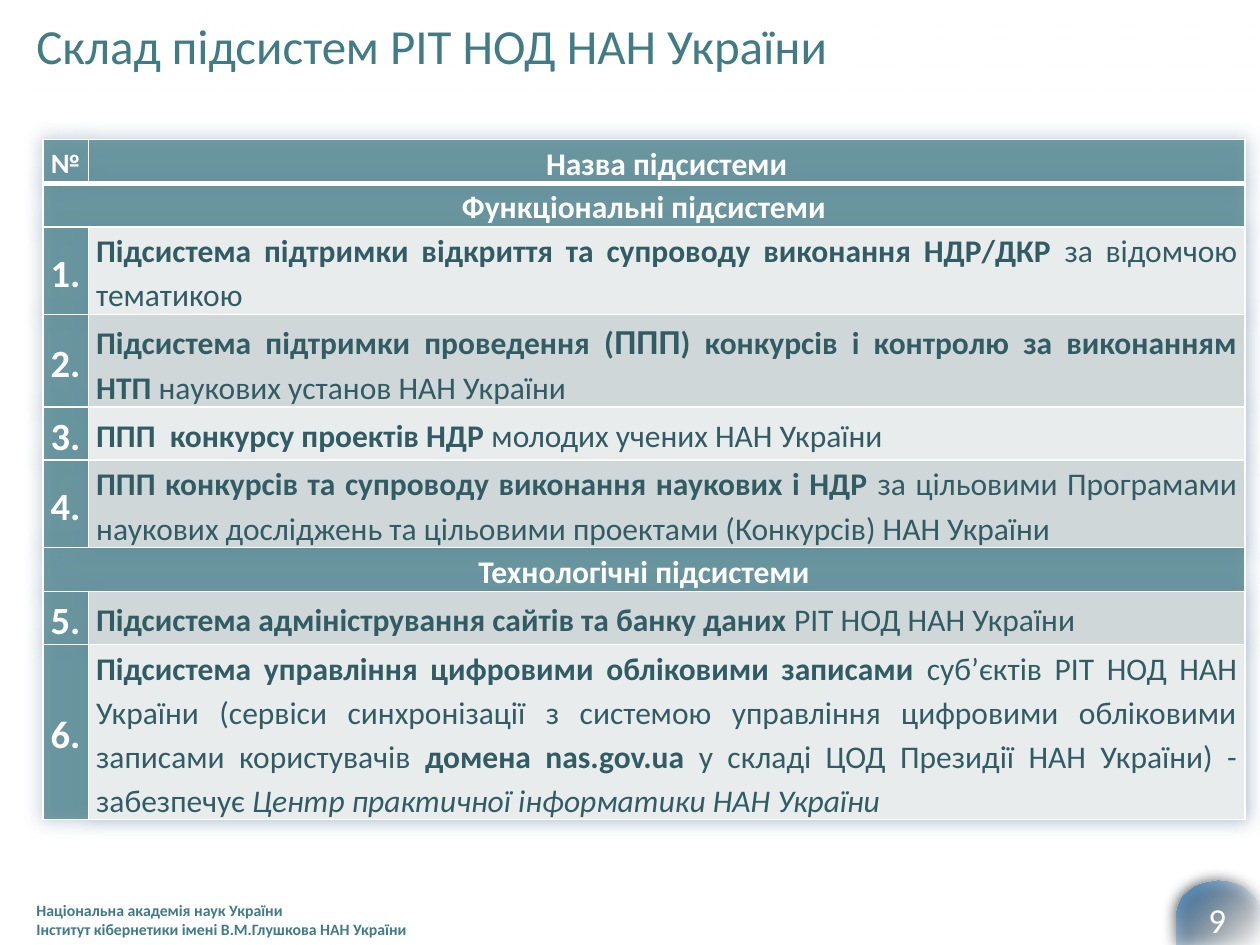
import pptx
import pptx.util
import pptx.oxml
import pptx.dml.color
import pptx.enum.shapes
import pptx.enum.text
from pptx.oxml.ns import nsdecls, qn

Pt = pptx.util.Pt
ALIGN = pptx.enum.text.PP_ALIGN
MIDDLE = pptx.enum.text.MSO_ANCHOR.MIDDLE
LEFT, MID, JUST = ALIGN.LEFT, ALIGN.CENTER, ALIGN.JUSTIFY


def rgb(code):
    return pptx.dml.color.RGBColor.from_string(code)


def xml(tag, attrs="", inner=""):
    return pptx.oxml.parse_xml(f"<a:{tag} {nsdecls('a')} {attrs}>{inner}</a:{tag}>")


def tint(code, alpha=100):
    """Colour element with its opacity in percent."""
    return f'<a:srgbClr val="{code}"><a:alpha val="{alpha * 1000}"/></a:srgbClr>'


def glow(code, alpha, blur, dist=0, angle=0):
    """Effect list with one soft outer shadow."""
    shade = (f'<a:outerShdw blurRad="{Pt(blur)}" dist="{Pt(dist)}" '
             f'dir="{angle * 60000}" rotWithShape="0">{tint(code, alpha)}</a:outerShdw>')
    return xml("effectLst", "", shade)


def write(frame, runs, size=18, color="FFFFFF", bold=False, align=LEFT, space=None):
    """Fill a text frame; runs is a string or a list of (text, changes)."""
    frame.word_wrap = True
    frame.vertical_anchor = MIDDLE
    para = frame.paragraphs[0]
    para.alignment = align
    if space:
        para.line_spacing = space
    for text, diff in [(runs, {})] if isinstance(runs, str) else runs:
        for i, line in enumerate(text.split("\n")):
            if i:
                para.add_line_break()
            run = para.add_run()
            run.text = line
            font = run.font
            font.name = "Calibri"
            font.size = Pt(diff.get("size", size))
            font.bold = diff.get("bold", bold)
            font.italic = diff.get("italic", False)
            font.color.rgb = rgb(color)


class Deck:
    teal, dark, white = "417B85", "315C63", "FFFFFF"
    head, pale, gray = "417B84", "E9ECED", "CFD7D9"

    def __init__(self, wide, high):
        self.file = pptx.Presentation()
        self.file.slide_width, self.file.slide_height = Pt(wide), Pt(high)
        self.slide = self.file.slides.add_slide(self.file.slide_layouts[6])

    def text(self, box, words, **style):
        item = self.slide.shapes.add_textbox(*map(Pt, box))
        write(item.text_frame, words, **style)
        return item

    def blend(self, item, stops, angle=0):
        """Gradient fill from (place, colour, opacity) stops."""
        marks = "".join(f'<a:gs pos="{pos * 1000}">{tint(code, alpha)}</a:gs>'
                        for pos, code, alpha in stops)
        props = item._element.spPr
        for old in props.findall(qn("a:noFill")):
            props.remove(old)
        fill = xml("gradFill", 'rotWithShape="1"',
                   f'<a:gsLst>{marks}</a:gsLst><a:lin ang="{angle * 60000}" scaled="0"/>')
        props.find(qn("a:prstGeom")).addnext(fill)

    def badge(self, box):
        kind = pptx.enum.shapes.MSO_SHAPE.FLOWCHART_DELAY
        item = self.slide.shapes.add_shape(kind, *map(Pt, box))
        item.rotation = 270
        item.line.fill.background()
        props = item._element.spPr
        props.find(qn("a:xfrm")).set("flipV", "1")
        self.blend(item, [(0, "E5E9EE", 0), (100, "3477B2", 100)], 45)
        props.append(glow("000000", 100, 8.5, 1, 90))

    def cell(self, cell, words, fill, alpha=100, rule=1, **style):
        cell.margin_left = cell.margin_right = Pt(4.5)
        cell.margin_top = cell.margin_bottom = 0
        write(cell.text_frame, words, space=1.15, **style)
        cell.vertical_anchor = MIDDLE
        cell.fill.solid()
        cell.fill.fore_color.rgb = rgb(fill)
        props = cell._tc.get_or_add_tcPr()
        shade = props.find(qn("a:solidFill"))[0]
        shade.append(xml("alpha", f'val="{alpha * 1000}"'))
        for i, side in enumerate("LRTB"):
            width = rule if side == "B" else 1
            line = f"<a:solidFill>{tint(self.white)}</a:solidFill>"
            props.insert(i, xml("ln" + side, f'w="{Pt(width)}"', line))

    def table(self, box, cols, rows):
        item = self.slide.shapes.add_table(len(rows), len(cols), *map(Pt, box))
        grid = item.table
        grid.first_row = grid.horz_banding = False
        grid._tbl.tblPr.insert(0, glow("6F8FAF", 60, 10))
        for col, width in zip(grid.columns, cols):
            col.width = Pt(width)
        for i, (high, mark, words) in enumerate(rows):
            grid.rows[i].height = Pt(high)
            left, right = grid.cell(i, 0), grid.cell(i, 1)
            head = dict(fill=self.head, alpha=69, bold=True, align=MID)
            if not mark:  # section band
                left.merge(right)
                self.cell(left, words, **head)
            elif i == 0:  # column heads
                self.cell(left, mark, size=16, rule=3, **head)
                self.cell(right, words, rule=3, **head)
            else:
                self.cell(left, mark, size=22, **head)
                self.cell(right, words, fill=self.gray if i % 2 else self.pale,
                          color=self.dark, bold=True, align=JUST)


PLAIN = {"bold": False}
ROWS = [
    (25, "№", "Назва підсистеми"),
    (25, "", "Функціональні підсистеми"),
    (50, "1.", [("Підсистема підтримки відкриття та супроводу виконання НДР/ДКР ", {}),
                ("за відомчою тематикою", PLAIN)]),
    (53, "2.", [("Підсистема підтримки проведення (", {}),
                ("ППП", {"size": 20}),
                (") конкурсів і контролю за виконанням НТП ", {}),
                ("наукових установ НАН України", PLAIN)]),
    (30, "3.", [("ППП  конкурсу проектів НДР ", {}),
                ("молодих учених НАН України", PLAIN)]),
    (50, "4.", [("ППП конкурсів та супроводу виконання наукових і НДР ", {}),
                ("за цільовими Програмами наукових досліджень та цільовими "
                 "проектами (Конкурсів) НАН України", PLAIN)]),
    (25, "", "Технологічні підсистеми"),
    (30, "5.", [("Підсистема адміністрування сайтів та банку даних ", {}),
                ("РІТ НОД НАН України", PLAIN)]),
    (100, "6.", [("Підсистема управління цифровими обліковими записами", {}),
                 (" суб’єктів РІТ НОД НАН України (сервіси синхронізації з системою "
                  "управління цифровими обліковими записами користувачів ", PLAIN),
                 ("домена nas.gov.ua ", {}),
                 ("у складі ЦОД Президії НАН України) - забезпечує ", PLAIN),
                 ("Центр практичної інформатики НАН України",
                  {"bold": False, "italic": True})]),
]


def main():
    deck = Deck(720, 540)

    # Corner badge
    deck.badge((677.5, 497.5, 36.7, 47.5))

    # Title on a fading white band
    title = deck.text((13.7, 0, 706.3, 51.8), "Склад підсистем РІТ НОД НАН України",
                      size=28, color=deck.teal)
    deck.blend(title, [(0, "FFFFFF", 49), (15, "FFFFFF", 100),
                       (54, "FFFFFF", 70), (100, "FFFFFF", 0)])

    # Footer and page number
    deck.text((13.7, 511.2, 318.2, 28.8),
              "Національна академія наук України\n"
              "Інститут кібернетики імені В.М.Глушкова НАН України",
              size=9, color=deck.teal, bold=True)
    deck.text((672.5, 511.2, 46, 28.8), "9", size=20, color="FEFFFF", align=MID)

    # Table of subsystems
    high = sum(row[0] for row in ROWS)
    deck.table((24.5, 79.7, 687, high), (26, 661), ROWS)

    deck.file.save("out.pptx")


if __name__ == "__main__":
    main()
